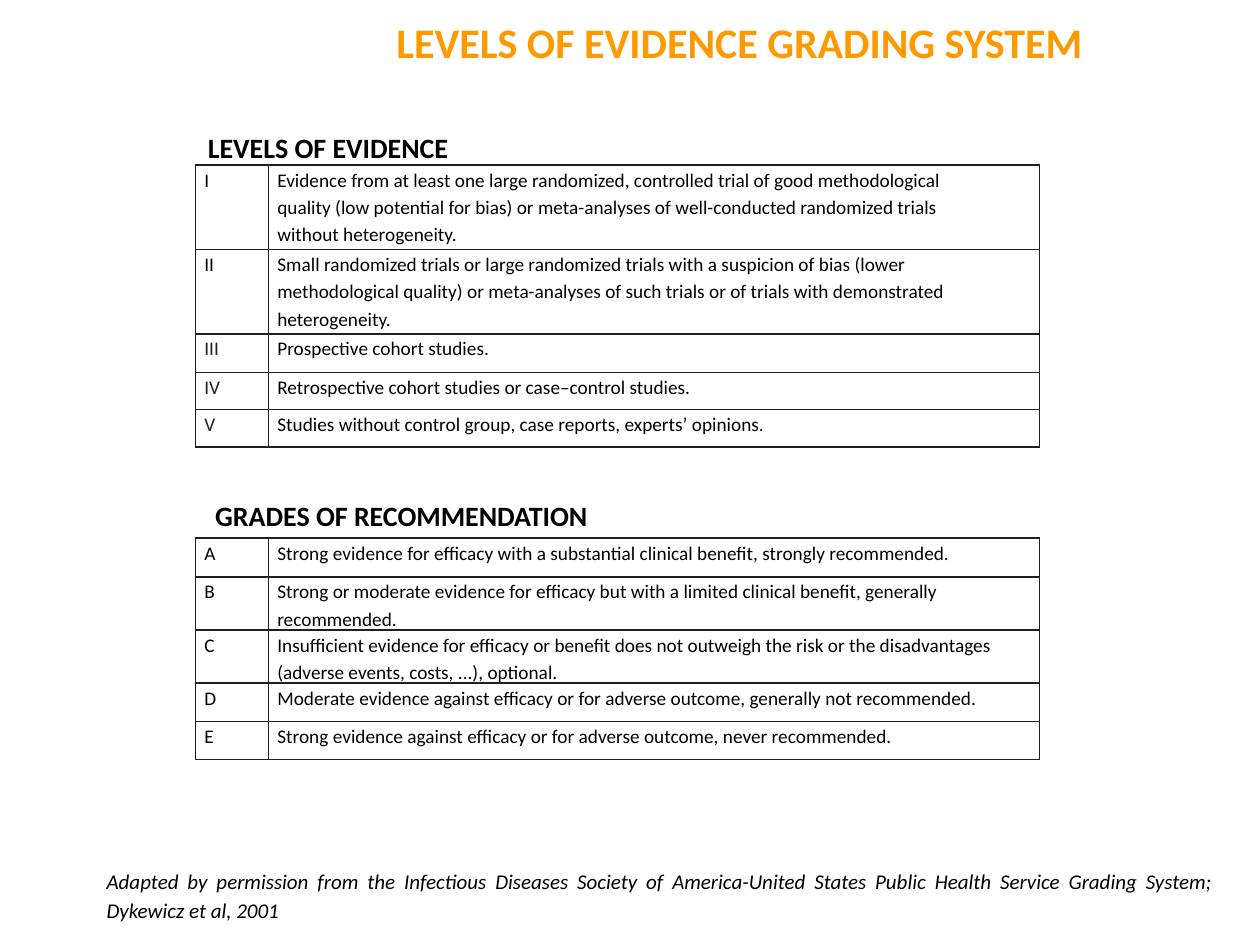
from dataclasses import dataclass

import pptx
import pptx.dml.color
import pptx.enum.text
import pptx.oxml
import pptx.oxml.ns
import pptx.util

Cm = pptx.util.Cm
Align = pptx.enum.text.PP_ALIGN


@dataclass(frozen=True)
class Theme:
    font: str = "Calibri"
    ink: str = "000000"
    accent: str = "FF9900"
    rule: str = "231F20"
    title_size: int = 24
    heading_size: int = 16
    note_size: int = 12
    cell_size: int = 11
    line_spacing: float = 1.15
    rule_width: int = 1


class SlideBuilder:
    def __init__(self, prs, theme):
        self.theme = theme
        self.s = prs.slides.add_slide(prs.slide_layouts[5])

    def style(self, p, size, color, bold=False, italic=False):
        for r in p.runs:
            r.font.name = self.theme.font
            r.font.size = pptx.util.Pt(size)
            r.font.color.rgb = pptx.dml.color.RGBColor.from_string(color)
            r.font.bold = bold
            r.font.italic = italic

    def fill_box(self, sp, text, align):
        tf = sp.text_frame
        tf.text = text
        tf.word_wrap = True
        tf.auto_size = pptx.enum.text.MSO_AUTO_SIZE.SHAPE_TO_FIT_TEXT
        tf.vertical_anchor = pptx.enum.text.MSO_ANCHOR.TOP
        p = tf.paragraphs[0]
        p.alignment = align
        return p

    def title(self, text, left, top, width, height):
        sp = self.s.shapes.title
        sp.left, sp.top, sp.width, sp.height = map(Cm, (left, top, width, height))
        p = self.fill_box(sp, text, Align.CENTER)
        self.style(p, self.theme.title_size, self.theme.accent, bold=True)

    def text_box(self, text, left, top, width, height, align):
        sp = self.s.shapes.add_textbox(*map(Cm, (left, top, width, height)))
        return self.fill_box(sp, text, align)

    def heading(self, text, left, top):
        p = self.text_box(text, left, top, 8.56, 0.94, Align.LEFT)
        self.style(p, self.theme.heading_size, self.theme.ink, bold=True)

    def note(self, text, left, top, width, height):
        p = self.text_box(text, left, top, width, height, Align.JUSTIFY)
        p.line_spacing = self.theme.line_spacing
        p.space_after = pptx.util.Pt(10)
        self.style(p, self.theme.note_size, self.theme.ink, italic=True)

    def borders(self, cell):
        tc_pr = cell._tc.get_or_add_tcPr()
        ns = pptx.oxml.ns.nsdecls("a")
        width = pptx.util.Pt(self.theme.rule_width)
        for i, side in enumerate("LRTB"):
            tc_pr.insert(i, pptx.oxml.parse_xml(
                f'<a:ln{side} {ns} w="{width}"><a:solidFill>'
                f'<a:srgbClr val="{self.theme.rule}"/></a:solidFill></a:ln{side}>'))

    def cell(self, cell, text, color, right):
        cell.margin_left = cell.margin_top = cell.margin_bottom = 0
        cell.margin_right = Cm(right)
        cell.fill.background()
        self.borders(cell)
        p = cell.text_frame.paragraphs[0]
        p.text = text
        p.line_spacing = self.theme.line_spacing
        p._p.get_or_add_pPr().set("marL", str(Cm(0.18)))
        self.style(p, self.theme.cell_size, color)

    def table(self, rows, left, top, widths):
        height = sum(row[2] for row in rows)
        frame = self.s.shapes.add_table(
            len(rows), len(widths), *map(Cm, (left, top, sum(widths), height)))
        tbl = frame.table
        tbl.first_row = tbl.horz_banding = False
        for col, width in zip(tbl.columns, widths):
            col.width = Cm(width)
        for i, (label, text, row_height, label_color, right) in enumerate(rows):
            tbl.rows[i].height = Cm(row_height)
            self.cell(tbl.cell(i, 0), label, label_color, 0)
            self.cell(tbl.cell(i, 1), text, self.theme.ink, right)


def main():
    theme = Theme()
    prs = pptx.Presentation()
    prs.slide_width, prs.slide_height = Cm(25.4), Cm(19.05)
    slide = SlideBuilder(prs, theme)
    ink, rule = theme.ink, theme.rule
    left, widths = 3.94, (1.47, 15.55)

    levels = [
        ("I", "Evidence from at least one large randomized, controlled trial of good "
         "methodological quality (low potential for bias) or meta-analyses of "
         "well-conducted randomized trials without heterogeneity.", 1.7, ink, 1.2),
        ("II", "Small randomized trials or large randomized trials with a suspicion of "
         "bias (lower methodological quality) or meta-analyses of such trials or of "
         "trials with demonstrated heterogeneity.", 1.7, ink, 1.2),
        ("III", "Prospective cohort studies.", 0.78, rule, 0),
        ("IV", "Retrospective cohort studies or case–control studies.", 0.74, rule, 0),
        ("V", "Studies without control group, case reports, experts’ opinions.",
         0.76, rule, 0),
    ]
    grades = [
        ("A", "Strong evidence for efficacy with a substantial clinical benefit, "
         "strongly recommended.", 0.78, ink, 0),
        ("B", "Strong or moderate evidence for efficacy but with a limited clinical "
         "benefit, generally recommended.", 1.07, ink, 0.5),
        ("C", "Insufficient evidence for efficacy or benefit does not outweigh the risk "
         "or the disadvantages (adverse events, costs, ...), optional.", 1.07, ink, 0),
        ("D", "Moderate evidence against efficacy or for adverse outcome, generally not "
         "recommended.", 0.77, ink, 0),
        ("E", "Strong evidence against efficacy or for adverse outcome, never "
         "recommended.", 0.77, ink, 0),
    ]

    slide.title("LEVELS OF EVIDENCE GRADING SYSTEM", 6.91, 0.2, 16, 1.27)
    slide.table(levels, left, 3.33, widths)
    slide.table(grades, left, 10.85, widths)
    slide.heading("LEVELS OF EVIDENCE", left, 2.51)
    slide.heading("GRADES OF RECOMMENDATION", 4.09, 9.93)
    slide.note("Adapted by permission from the Infectious Diseases Society of "
               "America-United States Public Health Service Grading System; "
               "Dykewicz et al, 2001", 1.9, 17.3, 22.81, 1.45)
    prs.save("out.pptx")


if __name__ == "__main__":
    main()
